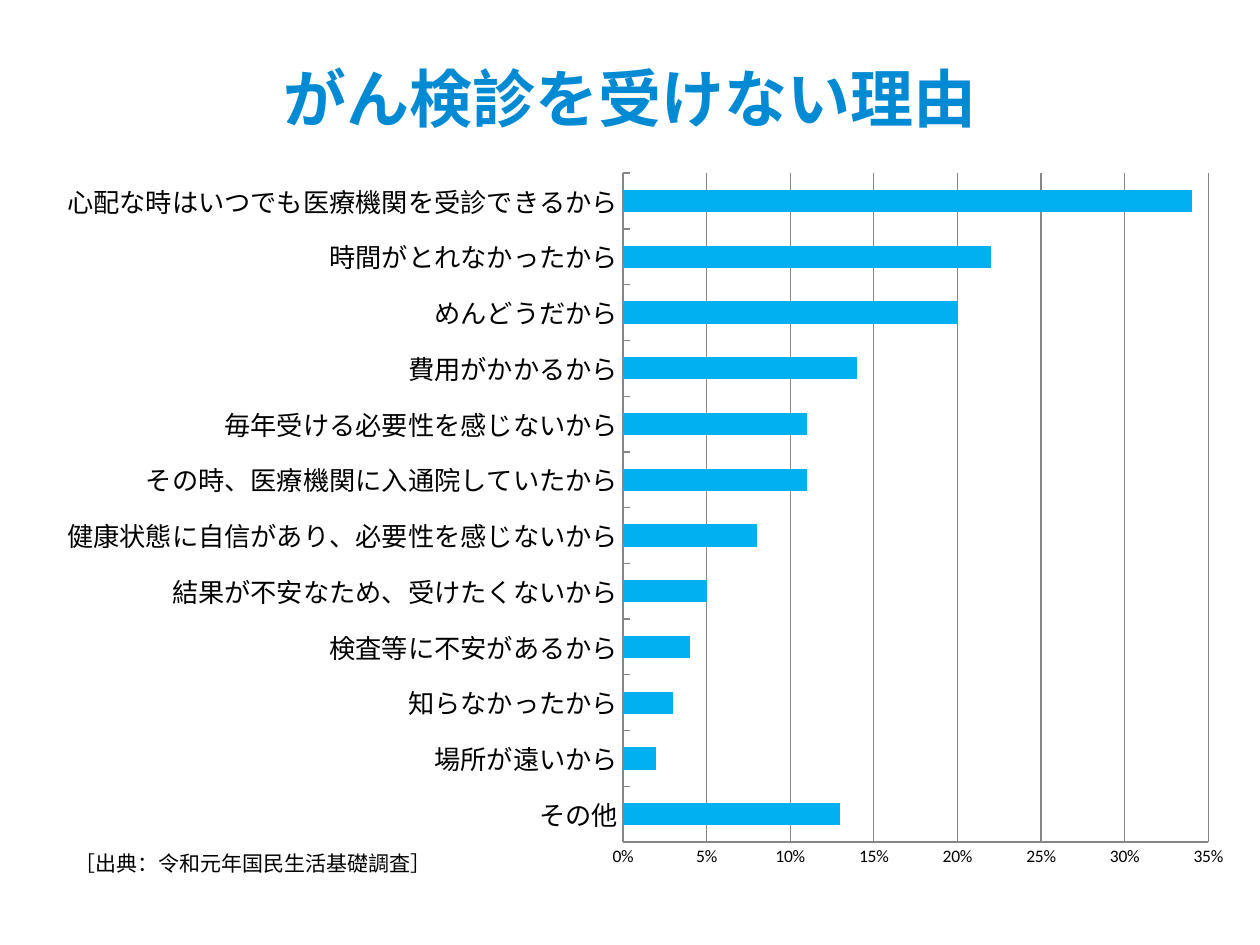
from lxml import etree
from pptx import Presentation
from pptx.chart.data import CategoryChartData
from pptx.dml.color import RGBColor
from pptx.enum.chart import XL_CHART_TYPE, XL_TICK_MARK
from pptx.enum.text import MSO_ANCHOR, MSO_AUTO_SIZE, PP_ALIGN
from pptx.oxml import parse_xml
from pptx.oxml.ns import nsdecls, qn
from pptx.util import Cm, Pt

# Content
TITLE = "がん検診を受けない理由"
SOURCE = "［出典：令和元年国民生活基礎調査］"
REASONS = [  # from top to bottom
    ("心配な時はいつでも医療機関を受診できるから", 0.34),
    ("時間がとれなかったから", 0.22),
    ("めんどうだから", 0.2),
    ("費用がかかるから", 0.14),
    ("毎年受ける必要性を感じないから", 0.11),
    ("その時、医療機関に入通院していたから", 0.11),
    ("健康状態に自信があり、必要性を感じないから", 0.08),
    ("結果が不安なため、受けたくないから", 0.05),
    ("検査等に不安があるから", 0.04),
    ("知らなかったから", 0.03),
    ("場所が遠いから", 0.02),
    ("その他", 0.13),
]

# Style
COLORS = {"title": "008AD4", "text": "000000", "bar": "00B0F0", "line": "868686"}
JAPANESE_FONT = "Noto Sans CJK JP"
TITLE_FONT = {"name": JAPANESE_FONT, "size": Pt(36), "bold": True}
SOURCE_FONT = {"name": JAPANESE_FONT, "size": Pt(12)}
CHART_FONT = {"name": "Calibri", "size": Pt(10)}
CATEGORY_FONT = {"size": Pt(15)}
VALUE_FONT = {"size": Pt(10)}
TITLE_FRAME = {
    "margin_left": 0, "margin_right": 0, "margin_top": 0, "margin_bottom": 0,
    "vertical_anchor": MSO_ANCHOR.TOP, "auto_size": MSO_AUTO_SIZE.NONE,
}
SOURCE_FRAME = {"word_wrap": False, "vertical_anchor": MSO_ANCHOR.MIDDLE}
VALUE_AXIS = {
    "minimum_scale": 0, "maximum_scale": 0.35, "major_unit": 0.05,
    "has_major_gridlines": True,
}
PLOT_LAYOUT = {"x": 0.494, "y": 0.02, "w": 0.494, "h": 0.925}


def apply(target, values):
    for name, value in values.items():
        setattr(target, name, value)


def format_font(font, values, color):
    apply(font, values)
    font.color.rgb = RGBColor.from_string(COLORS[color])


def write_line(shape, text, frame_values, font_values, color):
    frame = shape.text_frame
    apply(frame, frame_values)
    paragraph = frame.paragraphs[0]
    paragraph.alignment = PP_ALIGN.CENTER
    run = paragraph.add_run()
    run.text = text
    format_font(run.font, font_values, color)
    east_asian = etree.SubElement(run.font._element, qn("a:ea"))
    east_asian.set("typeface", font_values["name"])
    return paragraph


def format_line(line):
    line.color.rgb = RGBColor.from_string(COLORS["line"])
    line.width = Pt(0.75)


def set_plot_layout(chart):
    settings = "".join(f'<c:{edge}Mode val="edge"/>' for edge in "xy")
    settings += "".join(f'<c:{key} val="{value}"/>' for key, value in PLOT_LAYOUT.items())
    plot_area = chart._chartSpace.chart.plotArea
    for layout in plot_area.findall(qn("c:layout")):
        plot_area.remove(layout)
    plot_area.insert(0, parse_xml(
        f'<c:layout {nsdecls("c")}><c:manualLayout><c:layoutTarget val="inner"/>'
        f"{settings}</c:manualLayout></c:layout>"))


presentation = Presentation()
presentation.slide_width, presentation.slide_height = Cm(25.4), Cm(19.05)
slide = presentation.slides.add_slide(presentation.slide_layouts[5])

# Title
title = slide.shapes.title
apply(title, {"left": Cm(1.57), "top": Cm(1.19), "width": Cm(22.25), "height": Cm(1.8)})
title_paragraph = write_line(title, TITLE, TITLE_FRAME, TITLE_FONT, "title")
title_paragraph.space_after = Pt(30)

# Source note
source = slide.shapes.add_textbox(Cm(1.22), Cm(17.02), Cm(7.77), Cm(0.76))
write_line(source, SOURCE, SOURCE_FRAME, SOURCE_FONT, "text")

# Bar chart: the first category is drawn at the bottom
chart_data = CategoryChartData(number_format="0%")
chart_data.categories = [reason for reason, share in reversed(REASONS)]
chart_data.add_series("Series 1", [share for reason, share in reversed(REASONS)])
chart = slide.shapes.add_chart(
    XL_CHART_TYPE.BAR_CLUSTERED, Cm(0.76), Cm(3.2), Cm(23.9), Cm(14.58), chart_data).chart
apply(chart, {"has_legend": False, "has_title": False})
format_font(chart.font, CHART_FONT, "text")
set_plot_layout(chart)

plot = chart.plots[0]
apply(plot, {"gap_width": 150, "vary_by_categories": False})
fill = plot.series[0].format.fill
fill.solid()
fill.fore_color.rgb = RGBColor.from_string(COLORS["bar"])

# Axes
for axis, font_values in ((chart.category_axis, CATEGORY_FONT), (chart.value_axis, VALUE_FONT)):
    apply(axis, {"major_tick_mark": XL_TICK_MARK.INSIDE, "minor_tick_mark": XL_TICK_MARK.NONE})
    format_font(axis.tick_labels.font, font_values, "text")
    format_line(axis.format.line)
apply(chart.value_axis, VALUE_AXIS)
apply(chart.value_axis.tick_labels, {"number_format": "0%", "number_format_is_linked": False})
format_line(chart.value_axis.major_gridlines.format.line)

presentation.save("out.pptx")
